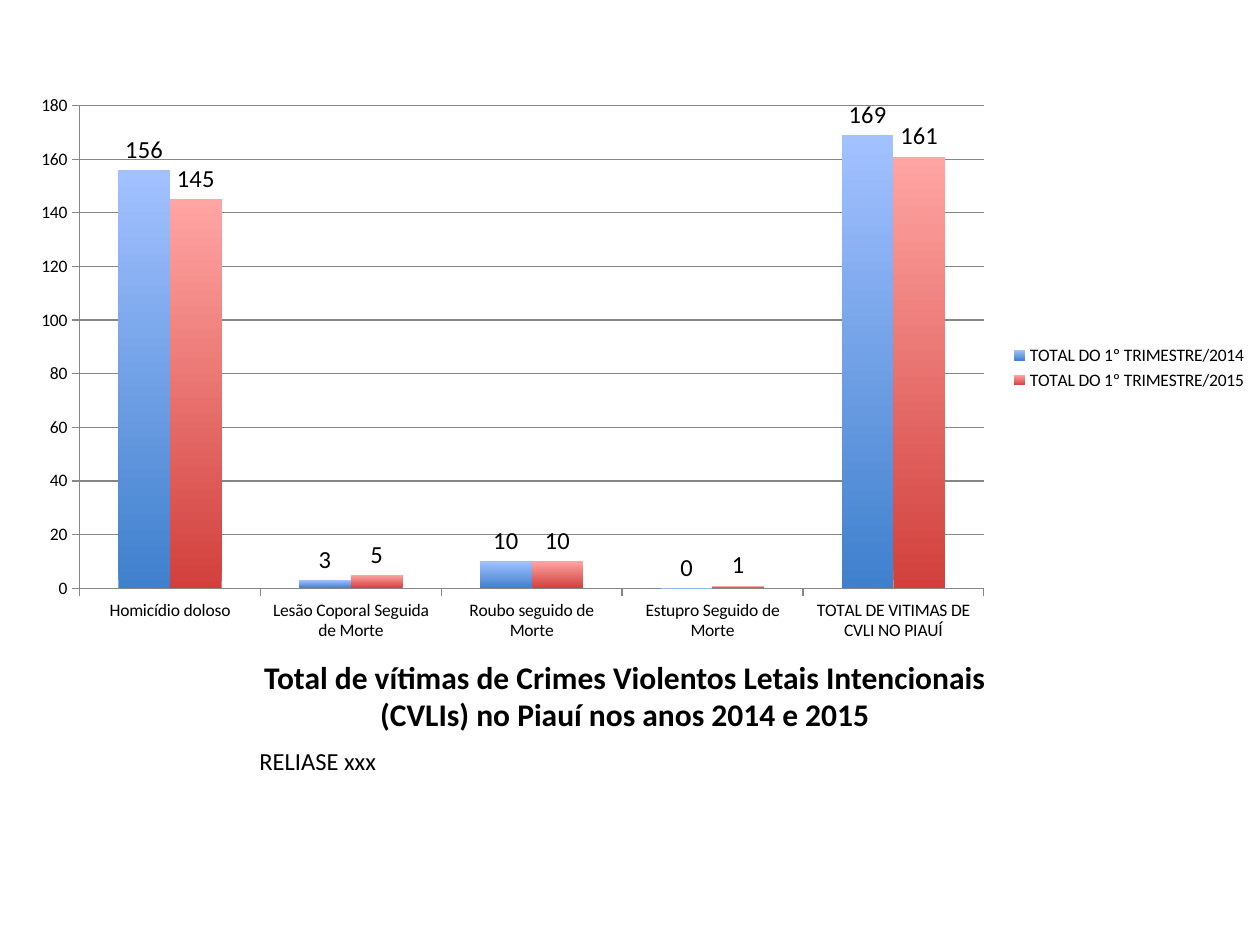
from dataclasses import dataclass

from pptx import Presentation
from pptx.chart.data import CategoryChartData
from pptx.dml.color import RGBColor
from pptx.enum.chart import XL_CHART_TYPE, XL_LABEL_POSITION, XL_LEGEND_POSITION, XL_TICK_MARK
from pptx.enum.text import MSO_ANCHOR, MSO_AUTO_SIZE, PP_ALIGN
from pptx.util import Inches, Pt


@dataclass(frozen=True)
class Theme:
    font: str = "Calibri"
    text: str = "000000"
    rule: str = "868686"
    bars: tuple = (("3F80CD", "A3C1FF"), ("D1403C", "FFA5A3"))
    title_size: int = 18
    body_size: int = 14
    axis_size: int = 10


def style_font(font, size, bold=False):
    font.name = theme.font
    font.size = Pt(size)
    font.bold = bold
    font.color.rgb = RGBColor.from_string(theme.text)


def place(box, left, top, width, height):
    box.left, box.top = Inches(left), Inches(top)
    box.width, box.height = Inches(width), Inches(height)


theme = Theme()
deck = Presentation()
deck.slide_width, deck.slide_height = Inches(10), Inches(7.5)
page = deck.slides.add_slide(deck.slide_layouts[5])

# Title and caption share one column under the chart
column_left, column_width = 1.96, 6
title_top, title_height = 5.25, 0.62
caption_top = title_top + title_height

title = page.shapes.title
place(title, column_left, title_top, column_width, title_height)
caption = page.shapes.add_textbox(0, 0, 0, 0)
place(caption, column_left, caption_top, column_width, 0.88)

for box, words, size, bold, align, anchor in (
    (title, "Total de vítimas de Crimes Violentos Letais Intencionais (CVLIs) no Piauí "
            "nos anos 2014 e 2015", theme.title_size, True, PP_ALIGN.CENTER, MSO_ANCHOR.BOTTOM),
    (caption, "RELIASE xxx", theme.body_size, False, PP_ALIGN.LEFT, MSO_ANCHOR.TOP),
):
    frame = box.text_frame
    frame.text = words
    frame.word_wrap = True
    frame.auto_size = MSO_AUTO_SIZE.NONE
    frame.vertical_anchor = anchor
    para = frame.paragraphs[0]
    para.alignment = align
    style_font(para.runs[0].font, size, bold)

# Victims by type of crime, first quarter of each year
data = CategoryChartData()
data.categories = [
    "Homicídio doloso",
    "Lesão Coporal Seguida de Morte",
    "Roubo seguido de Morte",
    "Estupro Seguido de Morte",
    "TOTAL DE VITIMAS DE CVLI NO PIAUÍ",
]
data.add_series("TOTAL DO 1º TRIMESTRE/2014", (156, 3, 10, 0, 169))
data.add_series("TOTAL DO 1º TRIMESTRE/2015", (145, 5, 10, 1, 161))
chart = page.shapes.add_chart(
    XL_CHART_TYPE.COLUMN_CLUSTERED, Inches(0.13), Inches(0.67), Inches(9.87), Inches(4.5), data
).chart
style_font(chart.font, theme.axis_size)
chart.has_title = False
chart.has_legend = True
chart.legend.position = XL_LEGEND_POSITION.RIGHT
chart.legend.include_in_layout = False

values = chart.value_axis
values.minimum_scale, values.maximum_scale, values.major_unit = 0, 180, 20
values.has_major_gridlines = True
for axis in (chart.category_axis, values):
    axis.major_tick_mark = XL_TICK_MARK.OUTSIDE
for line in (chart.category_axis.format.line, values.format.line,
             values.major_gridlines.format.line):
    line.color.rgb = RGBColor.from_string(theme.rule)
    line.width = Pt(0.75)

plot = chart.plots[0]
plot.gap_width = 150
plot.overlap = 0
plot.vary_by_categories = False
for series, shades in zip(plot.series, theme.bars):
    fill = series.format.fill
    fill.gradient()
    fill.gradient_angle = 90
    for stop, shade in zip(fill.gradient_stops, shades):
        stop.color.rgb = RGBColor.from_string(shade)
    labels = series.data_labels
    labels.show_value = True
    labels.position = XL_LABEL_POSITION.OUTSIDE_END
    style_font(labels.font, theme.body_size)

deck.save("out.pptx")
